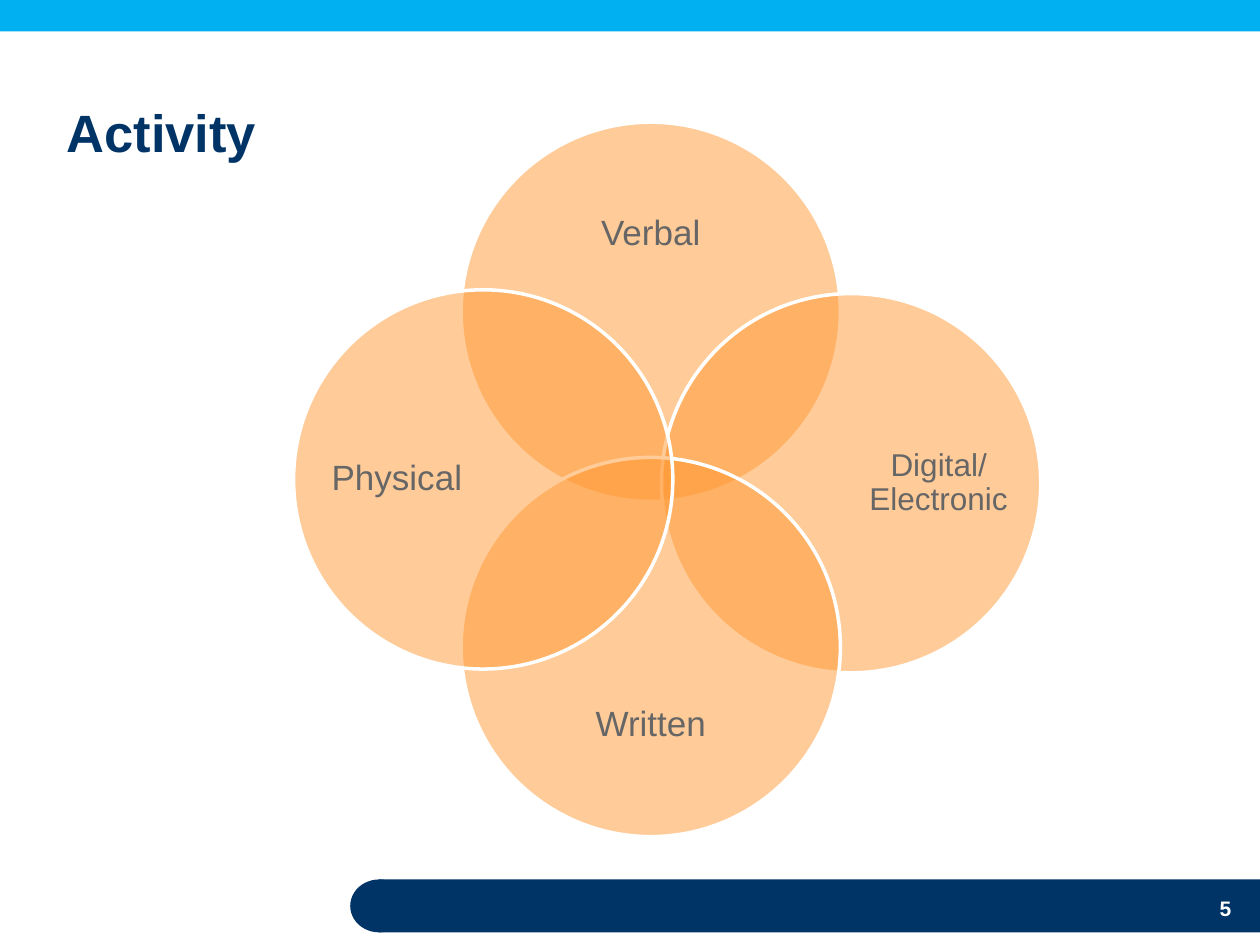
from lxml import etree
from pptx import Presentation
from pptx.dml.color import RGBColor
from pptx.enum.shapes import MSO_SHAPE
from pptx.enum.text import MSO_ANCHOR, PP_ALIGN
from pptx.oxml.ns import qn
from pptx.util import Inches, Pt

NAVY, SKY, ORANGE, GREY, WHITE = "003366", "00B0F0", "FF9933", "666666", "FFFFFF"


def color(hex_code):
    """Turn a hex string into a colour."""
    return RGBColor.from_string(hex_code)


def add_shape(s, kind, x, y, w, h, fill):
    """Add a plain filled shape without outline or shadow."""
    sp = s.shapes.add_shape(kind, Inches(x), Inches(y), Inches(w), Inches(h))
    sp.shadow.inherit = False
    sp.fill.solid()
    sp.fill.fore_color.rgb = color(fill)
    sp.line.fill.background()
    return sp


def add_text(s, x, y, w, h, text, size, fill, align, anchor, bold=False, inset=True):
    """Add a text box holding one run and return its paragraph."""
    tf = s.shapes.add_textbox(Inches(x), Inches(y), Inches(w), Inches(h)).text_frame
    tf.word_wrap = True
    tf.vertical_anchor = anchor
    tf.margin_left = tf.margin_right = Inches(0.1 if inset else 0)
    tf.margin_top = tf.margin_bottom = Inches(0.05 if inset else 0)
    p = tf.paragraphs[0]
    p.alignment = align
    r = p.add_run()
    r.text = text
    r.font.name, r.font.size, r.font.bold = "Arial", Pt(size), bold
    r.font.color.rgb = color(fill)
    return p


def add_footer(s, x, y, w, h, number):
    """Draw the round-ended footer bar with the slide number."""
    cap = 0.46
    add_shape(s, MSO_SHAPE.RECTANGLE, x + cap / 2, y, w - cap / 2, h, NAVY)
    add_shape(s, MSO_SHAPE.OVAL, x, y, cap, h, NAVY)
    add_text(s, x + w - 1.21, y + 0.08, 1.08, 0.25, number, 12, WHITE,
             PP_ALIGN.RIGHT, MSO_ANCHOR.TOP, bold=True)


def add_circle(s, x, y, d):
    """Draw one half-transparent circle with a white outline."""
    sp = add_shape(s, MSO_SHAPE.OVAL, x, y, d, d, ORANGE)
    sp.line.color.rgb = color(WHITE)
    sp.line.width = Pt(2)
    clr = sp.fill._xPr.find(qn("a:solidFill"))[0]
    etree.SubElement(clr, qn("a:alpha")).set("val", "50000")


def add_venn(s, x, y):
    """Draw the four overlapping circles and their labels."""
    wide, tall = (2.31, 0.95), (1.16, 2.31)
    circles = [
        ("Verbal", 20, 1.33, 0, 0.35, 0.41, wide),
        ("Digital/ Electronic", 18, 2.92, 1.36, 1.62, 0.35, tall),
        ("Written", 20, 1.33, 2.66, 0.35, 1.65, wide),
        ("Physical", 20, 0, 1.33, 0.24, 0.35, tall),
    ]
    for label, size, cx, cy, dx, dy, (w, h) in circles:
        add_circle(s, x + cx, y + cy, 3.01)
        p = add_text(s, x + cx + dx, y + cy + dy, w, h, label, size, GREY,
                     PP_ALIGN.CENTER, MSO_ANCHOR.MIDDLE, inset=False)
        p.line_spacing = 0.9


def main():
    """Build the slide and save it."""
    prs = Presentation()
    prs.slide_width, prs.slide_height = Inches(10), Inches(7.5)
    s = prs.slides.add_slide(prs.slide_layouts[6])
    add_footer(s, 2.78, 6.98, 7.22, 0.42, "5")
    add_shape(s, MSO_SHAPE.RECTANGLE, 0, 0, 10, 0.25, SKY)
    add_venn(s, 2.33, 0.97)
    add_text(s, 0.43, 0.17, 8.5, 1.17, "Activity", 30, NAVY,
             PP_ALIGN.LEFT, MSO_ANCHOR.BOTTOM, bold=True)
    prs.save("out.pptx")


if __name__ == "__main__":
    main()
